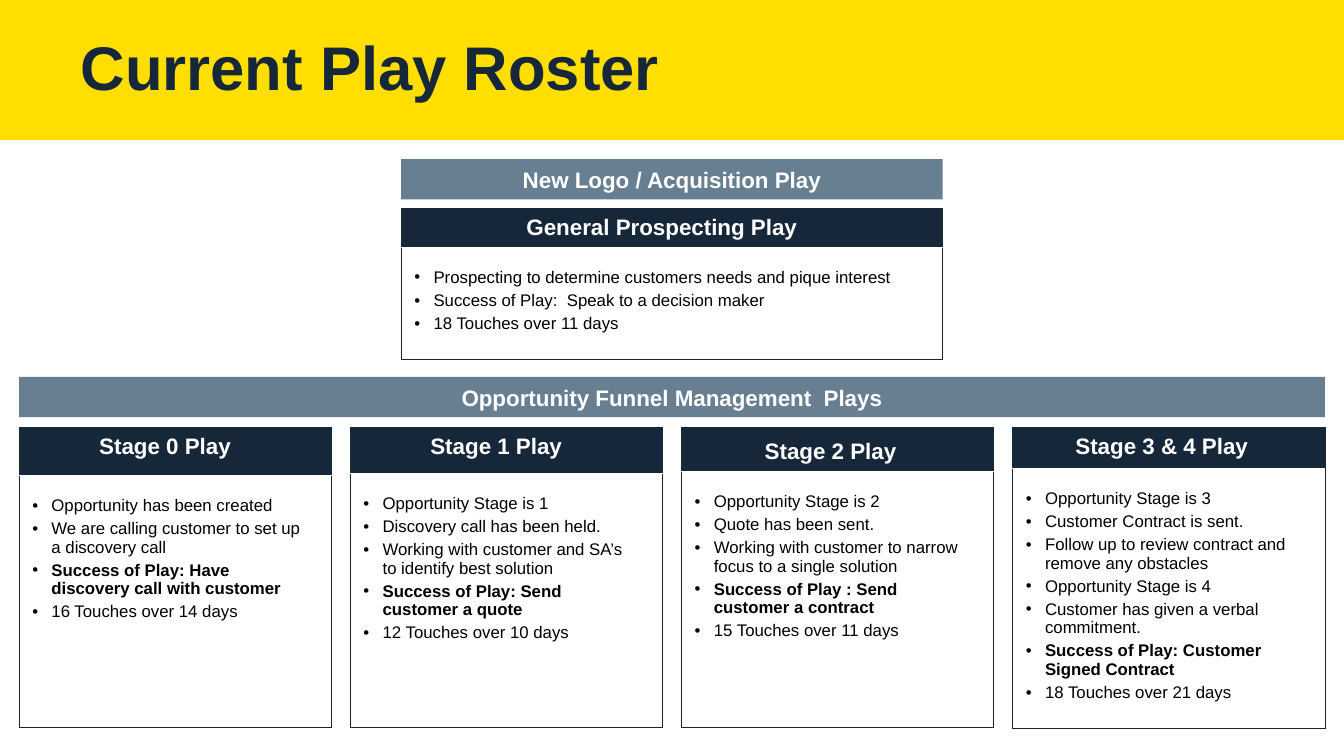
from lxml import etree
from pptx import Presentation
from pptx.dml.color import RGBColor
from pptx.enum.shapes import MSO_SHAPE
from pptx.enum.text import MSO_ANCHOR, PP_ALIGN
from pptx.oxml.ns import qn
from pptx.util import Inches, Pt

# Content
TITLE = "Current Play Roster"
ACQUISITION = "New Logo / Acquisition Play"
FUNNEL = "Opportunity Funnel Management  Plays"
TOP, MIDDLE, BOTTOM = MSO_ANCHOR.TOP, MSO_ANCHOR.MIDDLE, MSO_ANCHOR.BOTTOM

# Play: heading, heading anchor, heading height, body height, bullets, bold bullet
PROSPECTING = ("General Prospecting Play ", MIDDLE, 0.38, 1.11, [
    "Prospecting to determine customers needs and pique interest",
    "Success of Play:  Speak to a decision maker",
    "18 Touches over 11 days"], None)
STAGES = [
    ("Stage 0 Play ", TOP, 0.48, 2.5, [
        "Opportunity has been created",
        "We are calling customer to set up a discovery call",
        "Success of Play: Have discovery call with customer",
        "16 Touches over 14 days"], 2),
    ("Stage 1 Play ", TOP, 0.46, 2.52, [
        "Opportunity Stage is 1",
        "Discovery call has been held.",
        "Working with customer and SA’s to identify best solution",
        "Success of Play: Send customer a quote",
        "12 Touches over 10 days"], 3),
    ("Stage 2 Play", BOTTOM, 0.44, 2.54, [
        "Opportunity Stage is 2",
        "Quote has been sent.",
        "Working with customer to narrow focus to a single solution",
        "Success of Play : Send customer a contract",
        "15 Touches over 11 days"], 3),
    ("Stage 3 & 4 Play", TOP, 0.41, 2.58, [
        "Opportunity Stage is 3",
        "Customer Contract is sent.",
        "Follow up to review contract and remove any obstacles",
        "Opportunity Stage is 4",
        "Customer has given a verbal commitment.",
        "Success of Play: Customer Signed Contract",
        "18 Touches over 21 days"], 5),
]

# Colours and grid
YELLOW = RGBColor(0xFF, 0xDE, 0x00)
NAVY = RGBColor(0x16, 0x27, 0x39)
SLATE = RGBColor(0x68, 0x7F, 0x92)
WHITE = RGBColor(0xFF, 0xFF, 0xFF)
BLACK = RGBColor(0, 0, 0)
WIDTH, HEIGHT = 13.33, 7.5
MARGIN, GAP = 0.19, 0.19
FULL_W = WIDTH - 2 * MARGIN
STAGE_W = (FULL_W - GAP * (len(STAGES) - 1)) / len(STAGES)
TOP_W = 5.37
TOP_X = (WIDTH - TOP_W) / 2


def set_attrs(obj, values):
    for name, value in values.items():
        setattr(obj, name, value)


def write(p, text, size, color, bold):
    r = p.add_run()
    r.text = text
    set_attrs(r.font, dict(name="Arial", size=Pt(size), bold=bold))
    r.font.color.rgb = color


def add_bar(x, y, w, h, color, text=None):
    sp = s.shapes.add_shape(MSO_SHAPE.RECTANGLE, *map(Inches, (x, y, w, h)))
    sp.shadow.inherit = False
    sp.fill.solid()
    sp.fill.fore_color.rgb = color
    sp.line.fill.background()
    if text:
        p = sp.text_frame.paragraphs[0]
        p.alignment = PP_ALIGN.CENTER
        write(p, text, 16, WHITE, True)


def format_cell(cell, fill, anchor, top, sides):
    set_attrs(cell, dict(margin_left=Inches(0.13), margin_right=Inches(0.27),
                         margin_top=Inches(top), margin_bottom=Inches(0.07),
                         vertical_anchor=anchor))
    tcPr = cell._tc.get_or_add_tcPr()
    for side in sides:
        ln = etree.SubElement(tcPr, qn("a:ln" + side), w=str(Pt(0.5)))
        solid = etree.SubElement(ln, qn("a:solidFill"))
        etree.SubElement(solid, qn("a:srgbClr"), val=str(NAVY))
    cell.fill.solid()
    cell.fill.fore_color.rgb = fill


def add_play(x, y, w, play):
    heading, anchor, head_h, body_h, bullets, bold_at = play
    frame = s.shapes.add_table(2, 1, *map(Inches, (x, y, w, head_h + body_h)))
    table = frame.table
    set_attrs(table, dict(first_row=False, horz_banding=False))
    for row, h in zip(table.rows, (head_h, body_h)):
        row.height = Inches(h)
    head, body = table.cell(0, 0), table.cell(1, 0)
    format_cell(head, NAVY, anchor, 0.07, "LRT")
    format_cell(body, WHITE, TOP, 0.2, "LRTB")
    p = head.text_frame.paragraphs[0]
    p.alignment = PP_ALIGN.CENTER
    write(p, heading, 16, WHITE, True)
    tf = body.text_frame
    for i, text in enumerate(bullets):
        p = tf.add_paragraph() if i else tf.paragraphs[0]
        p.space_after = Pt(3)
        pPr = p._p.get_or_add_pPr()
        pPr.set("marL", str(Inches(0.19)))
        pPr.set("indent", str(-Inches(0.19)))
        etree.SubElement(pPr, qn("a:buFont"), typeface="Arial")
        etree.SubElement(pPr, qn("a:buChar"), char="•")
        write(p, text, 12, BLACK, i == bold_at)


prs = Presentation()
set_attrs(prs, dict(slide_width=Inches(WIDTH), slide_height=Inches(HEIGHT)))
s = prs.slides.add_slide(prs.slide_layouts[5])

# Title on its yellow band
add_bar(0, 0, WIDTH, 1.39, YELLOW)
title = s.shapes.title
s.shapes._spTree.append(title._element)
set_attrs(title, dict(left=Inches(0.7), top=Inches(0.27),
                      width=Inches(10.45), height=Inches(0.86)))
title.text_frame.vertical_anchor = MIDDLE
p = title.text_frame.paragraphs[0]
set_attrs(p, dict(alignment=PP_ALIGN.LEFT, line_spacing=0.9))
write(p, TITLE, 44, NAVY, True)

# Acquisition play
add_bar(TOP_X, 1.58, TOP_W, 0.4, SLATE, ACQUISITION)
add_play(TOP_X, 2.07, TOP_W, PROSPECTING)

# Funnel plays, one column per stage
add_bar(MARGIN, 3.74, FULL_W, 0.4, SLATE, FUNNEL)
for i, stage in enumerate(STAGES):
    add_play(MARGIN + i * (STAGE_W + GAP), 4.24, STAGE_W, stage)

prs.save("out.pptx")
